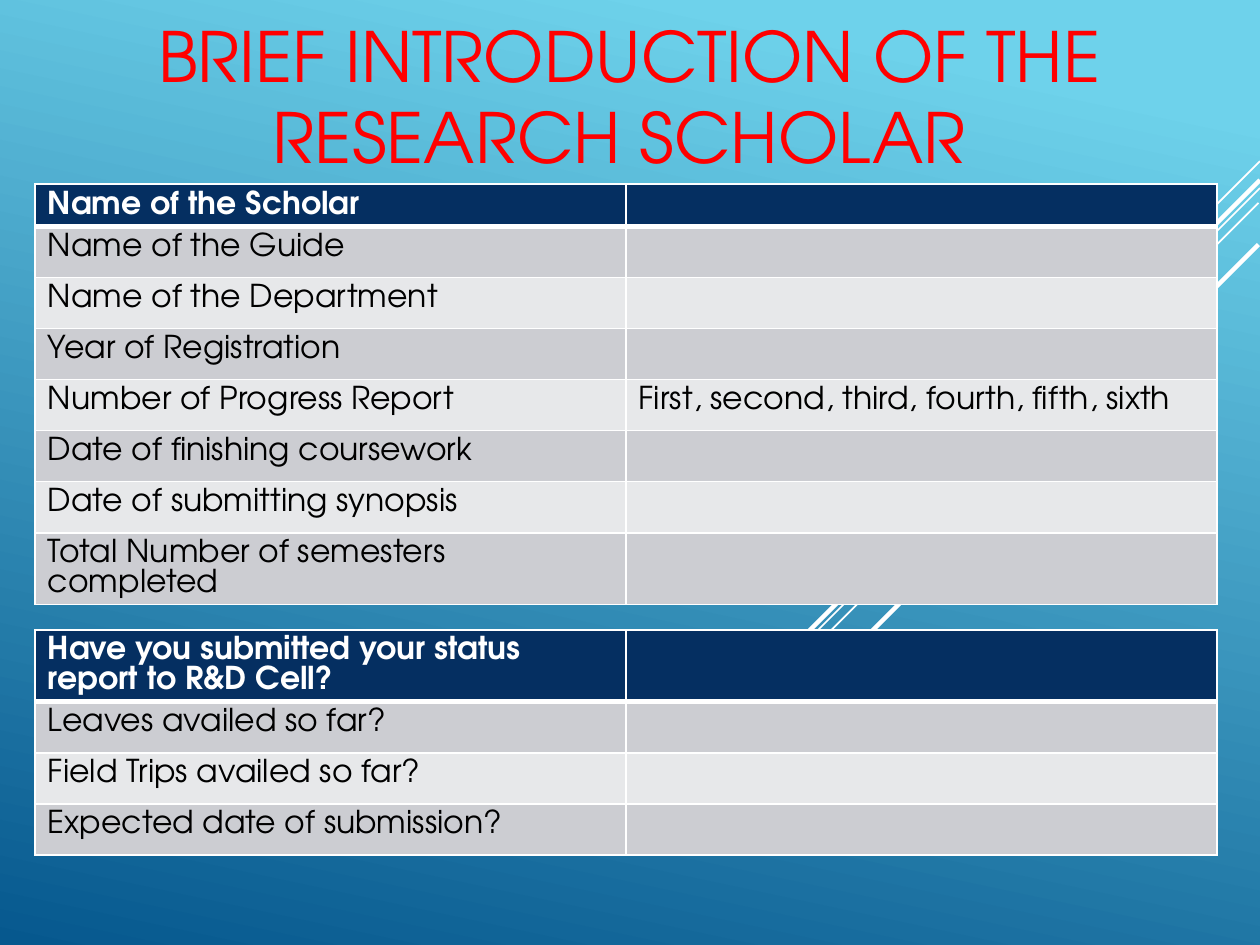
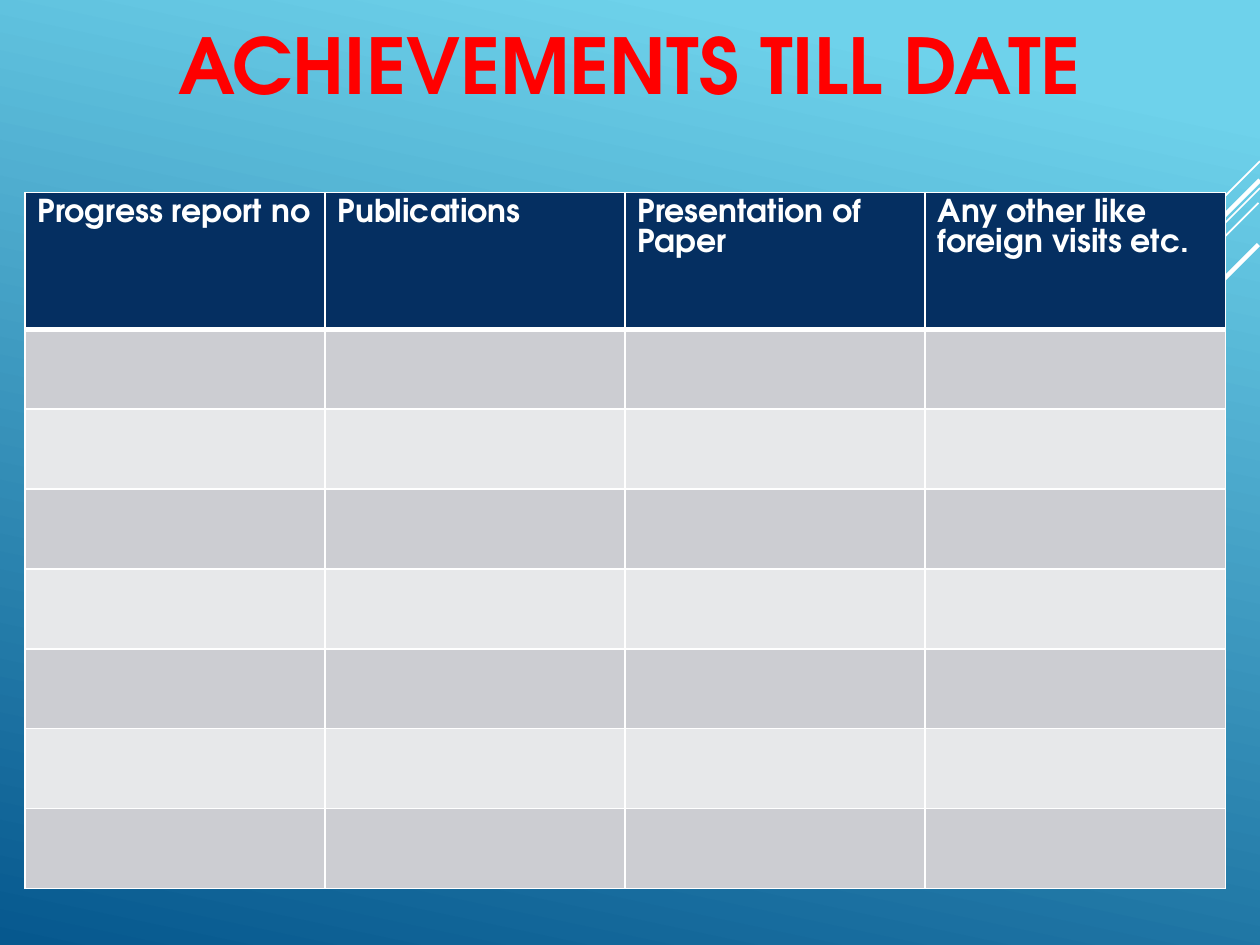
import pptx
import pptx.dml.color
import pptx.enum.shapes
import pptx.enum.text
import pptx.oxml.ns
import pptx.util
from lxml import etree

Cm, Pt = pptx.util.Cm, pptx.util.Pt
RGBColor = pptx.dml.color.RGBColor
qn = pptx.oxml.ns.qn

FONT = "TeX Gyre Adventor"
SKY = RGBColor(0x6E, 0xD2, 0xEB)
DEEP_BLUE = RGBColor(0x06, 0x58, 0x8E)
NAVY = RGBColor(0x05, 0x2F, 0x61)
BAND_DARK = RGBColor(0xCC, 0xCD, 0xD2)
BAND_LIGHT = RGBColor(0xE7, 0xE8, 0xEA)
RED = RGBColor(0xFF, 0x00, 0x00)
WHITE = RGBColor(0xFF, 0xFF, 0xFF)
BLACK = RGBColor(0x00, 0x00, 0x00)

# Lengths in cm. Each stripe runs down-left at 45 degrees: x, y, drop, width in pt
STRIPES = [
    (25.4, 3.25, 8.71, 1),
    (25.4, 3.79, 13.34, 1),
    (25.37, 4.09, 10.87, 1),
    (25.4, 3.63, 10.67, 2.5),
    (25.37, 4.93, 9.53, 2.5),
]

SLIDES = [
    {
        "title": "BRIEF INTRODUCTION OF THE RESEARCH SCHOLAR ",
        "title_box": (1.47, 1.47, 22.43, 2.24),
        "title_size": 39.6,
        "title_bold": False,
        "tables": [
            {
                "at": (0.71, 3.71),
                "col_width": 11.91,
                "heights": [0.85] + [1.03] * 6 + [1.43],
                "rows": [
                    ("Name of the Scholar", ""),
                    ("Name of the Guide", ""),
                    ("Name of the Department", ""),
                    ("Year of Registration", ""),
                    ("Number of Progress Report",
                     "First, second, third, fourth, fifth, sixth"),
                    ("Date of finishing coursework", ""),
                    ("Date of submitting synopsis", ""),
                    ("Total Number of semesters completed", ""),
                ],
            },
            {
                "at": (0.71, 12.7),
                "col_width": 11.91,
                "heights": [1.43] + [1.03] * 3,
                "rows": [
                    ("Have you submitted your status report to R&D Cell?", ""),
                    ("Leaves availed so far?", ""),
                    ("Field Trips availed so far?", ""),
                    ("Expected date of submission?", ""),
                ],
            },
        ],
    },
    {
        "title": "ACHIEVEMENTS TILL DATE",
        "title_box": (0, 0.13, 25.4, 2.21),
        "title_size": 44,
        "title_bold": True,
        "tables": [
            {
                "at": (0.5, 3.88),
                "col_width": 6.05,
                "heights": [2.76] + [1.61] * 7,
                "rows": [
                    ("Progress report no", "Publications",
                     "Presentation of Paper", "Any other like foreign visits etc."),
                ] + [("",) * 4] * 7,
            },
        ],
    },
]


def set_background(master):
    fill = master.background.fill
    fill.gradient()
    fill.gradient_angle = 360 - 102
    for stop, position, color in zip(fill.gradient_stops, (0.1, 1), (SKY, DEEP_BLUE)):
        stop.position = position
        stop.color.rgb = color


def add_stripes(slide):
    for x, y, drop, width in STRIPES:
        line = slide.shapes.add_connector(
            pptx.enum.shapes.MSO_CONNECTOR.STRAIGHT,
            Cm(x), Cm(y), Cm(x - drop), Cm(y + drop))
        line.line.color.rgb = WHITE
        line.line.width = Pt(width)
        etree.SubElement(line._element.spPr, qn("a:effectLst"))


def style_text(p, size, color, bold, spacing):
    p.font.name = FONT
    p.font.size = Pt(size)
    p.font.color.rgb = color
    p.font.bold = bold
    p.line_spacing = Pt(spacing)


def set_title(slide, content):
    sp = slide.shapes.title
    sp.left, sp.top, sp.width, sp.height = map(Cm, content["title_box"])
    tf = sp.text_frame
    tf.text = content["title"]
    tf.word_wrap = True
    tf.auto_size = pptx.enum.text.MSO_AUTO_SIZE.NONE
    tf.vertical_anchor = pptx.enum.text.MSO_ANCHOR.BOTTOM
    p = tf.paragraphs[0]
    p.alignment = pptx.enum.text.PP_ALIGN.CENTER
    size = content["title_size"]
    style_text(p, size, RED, content["title_bold"], round(size * 1.18, 1))


def set_borders(cell, top, bottom):
    """Draw white cell edges; top and bottom are widths in points."""
    tc_pr = cell._tc.get_or_add_tcPr()
    edges = (("L", 1), ("R", 1), ("T", top), ("B", bottom))
    for i, (side, width) in enumerate(edges):
        ln = etree.Element(qn(f"a:ln{side}"), w=str(Pt(width)))
        fill = etree.SubElement(ln, qn("a:solidFill"))
        etree.SubElement(fill, qn("a:srgbClr"), val=str(WHITE))
        tc_pr.insert(i, ln)


def add_banded_table(slide, content):
    rows, heights = content["rows"], content["heights"]
    n_cols = len(rows[0])
    left, top = content["at"]
    table = slide.shapes.add_table(
        len(rows), n_cols, Cm(left), Cm(top),
        Cm(content["col_width"] * n_cols), Cm(sum(heights))).table
    for col in table.columns:
        col.width = Cm(content["col_width"])
    for r, (texts, height) in enumerate(zip(rows, heights)):
        table.rows[r].height = Cm(height)
        header = r == 0
        band = NAVY if header else BAND_DARK if r % 2 else BAND_LIGHT
        for c, text in enumerate(texts):
            cell = table.cell(r, c)
            cell.text = text
            cell.fill.solid()
            cell.fill.fore_color.rgb = band
            style_text(cell.text_frame.paragraphs[0], 18,
                       WHITE if header else BLACK, header, 16.9)
            set_borders(cell, 3 if r == 1 else 1, 3 if header else 1)


def main():
    prs = pptx.Presentation()
    prs.slide_width, prs.slide_height = Cm(25.4), Cm(19.05)
    set_background(prs.slide_master)
    title_only = prs.slide_layouts[5]
    for content in SLIDES:
        slide = prs.slides.add_slide(title_only)
        add_stripes(slide)
        set_title(slide, content)
        for table in content["tables"]:
            add_banded_table(slide, table)
    prs.save("out.pptx")


if __name__ == "__main__":
    main()
